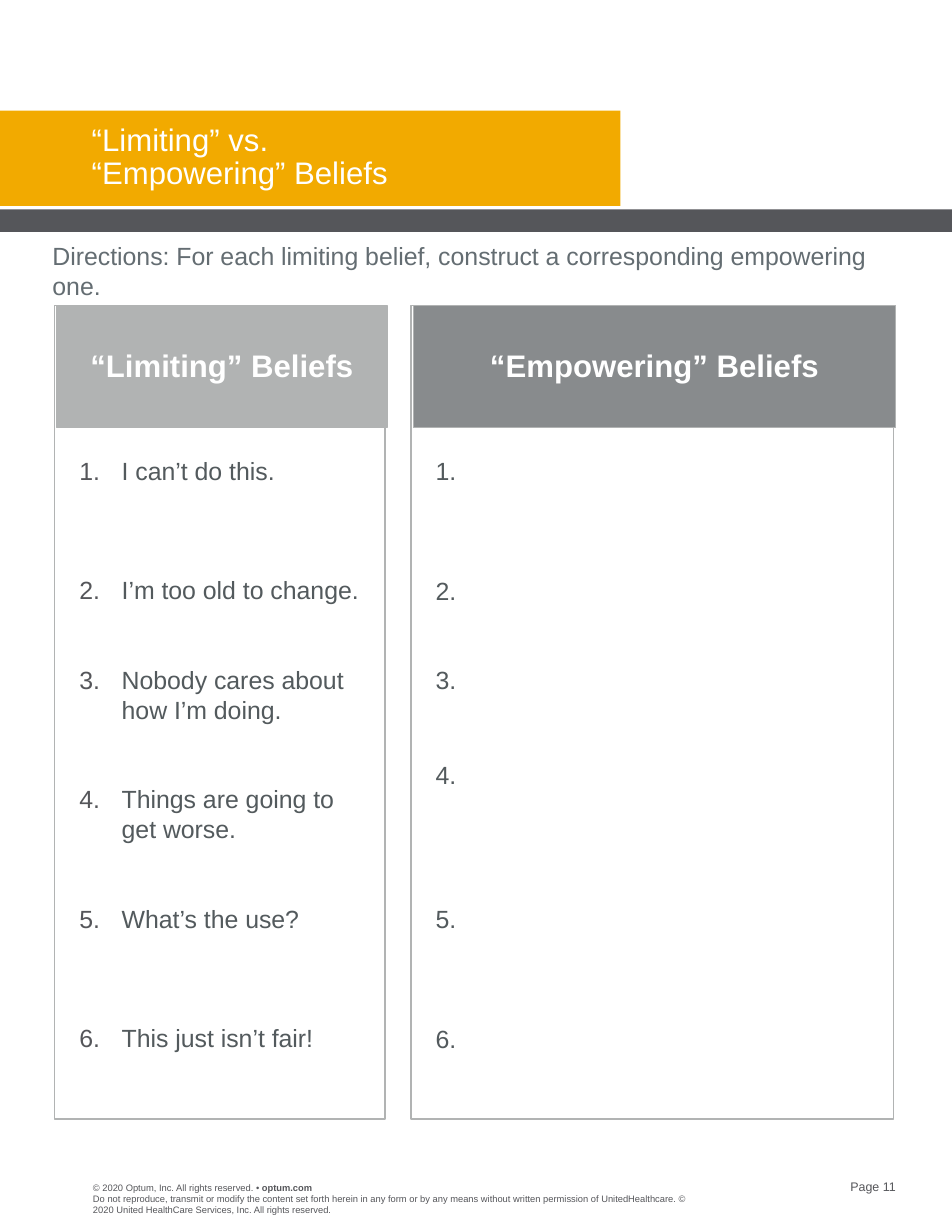
from pptx import Presentation
from pptx.dml.color import RGBColor
from pptx.enum.shapes import MSO_SHAPE
from pptx.enum.text import MSO_ANCHOR, MSO_AUTO_SIZE, PP_ALIGN
from pptx.oxml.ns import qn
from pptx.util import Cm, Pt
from lxml.etree import SubElement

WHITE = RGBColor(0xFF, 0xFF, 0xFF)
AMBER = RGBColor(0xF2, 0xAA, 0x00)
CHARCOAL = RGBColor(0x55, 0x56, 0x5A)
SLATE = RGBColor(0x64, 0x6D, 0x72)
BODY = RGBColor(0x53, 0x5A, 0x5D)
LIGHT_GRAY = RGBColor(0xB1, 0xB3, 0xB3)
MID_GRAY = RGBColor(0x88, 0x8B, 0x8D)

TITLE = "“Limiting” vs. \v“Empowering” Beliefs"
DIRECTIONS = "Directions: For each limiting belief, construct a corresponding empowering one."
COPYRIGHT = ["© 2020 Optum, Inc. All rights reserved. • ", "optum.com"]
PERMISSION = (
    "Do not reproduce, transmit or modify the content set forth herein in any form "
    "or by any means without written permission of UnitedHealthcare. "
    "© 2020 United HealthCare Services, Inc. All rights reserved."
)
PAGE = "Page 11"
LINE = 19.2
LIMITING = [
    ("I can’t do this.", 0),
    ("I’m too old to change.", 3 * LINE),
    ("Nobody cares about how I’m doing.", 2 * LINE),
    ("Things are going to get worse.", 2 * LINE),
    ("What’s the use?", 2 * LINE),
    ("This just isn’t fair!", 3 * LINE),
]
EMPOWERING = [
    ("1.", 0), ("2.", 57.8), ("3.", 38.3), ("4.", 41.9), ("5.", 73.4), ("6.", 57.8),
]
PANELS = [
    ("“Limiting” Beliefs", LIGHT_GRAY, 1.24, 7.49, LIMITING, True),
    ("“Empowering” Beliefs", MID_GRAY, 9.32, 10.95, EMPOWERING, False),
]
PANEL_TOP, PANEL_HEIGHT = 6.93, 18.45
HEADER_HEIGHT, HEADER_SHIFT = 2.77, 0.05


def set_font(font, size, color, bold=None):
    font.name, font.size, font.bold = "Arial", Pt(size), bold
    font.color.rgb = color


def prepare_frame(shape, insets=(0, 0, 0, 0), anchor=MSO_ANCHOR.TOP):
    frame = shape.text_frame
    frame.word_wrap = True
    frame.auto_size = MSO_AUTO_SIZE.NONE
    frame.vertical_anchor = anchor
    frame.margin_left, frame.margin_top, frame.margin_right, frame.margin_bottom = map(Cm, insets)
    return frame


def add_text(slide, box, runs, size, color, align=PP_ALIGN.LEFT):
    frame = prepare_frame(slide.shapes.add_textbox(*map(Cm, box)))
    paragraph = frame.paragraphs[0]
    paragraph.alignment = align
    for index, text in enumerate(runs):
        run = paragraph.add_run()
        run.text = text
        set_font(run.font, size, color, index > 0)


def add_rectangle(slide, box, fill=None, line=None, width=1):
    shape = slide.shapes.add_shape(MSO_SHAPE.RECTANGLE, *map(Cm, box))
    shape.shadow.inherit = False
    if fill is None:
        shape.fill.background()
    else:
        shape.fill.solid()
        shape.fill.fore_color.rgb = fill
    if line is None:
        shape.line.fill.background()
    else:
        shape.line.color.rgb = line
        shape.line.width = Pt(width)
    return shape


def number_paragraph(paragraph):
    properties = paragraph._p.get_or_add_pPr()
    properties.set("marL", str(Cm(0.96)))
    properties.set("indent", str(-Cm(0.96)))
    color = SubElement(properties, qn("a:buClr"))
    SubElement(color, qn("a:srgbClr"), val=str(CHARCOAL))
    SubElement(properties, qn("a:buFont"), typeface="Arial")
    SubElement(properties, qn("a:buAutoNum"), type="arabicPeriod")


def add_panel(slide, heading, fill, left, width, items, numbered):
    panel = add_rectangle(slide, (left, PANEL_TOP, width, PANEL_HEIGHT), line=LIGHT_GRAY)
    frame = prepare_frame(panel, (0.56, 3.4, 0.56, 0))
    frame.text = "\n".join(text for text, _ in items)
    for paragraph, (_, gap) in zip(frame.paragraphs, items):
        paragraph.alignment = PP_ALIGN.LEFT
        if gap:
            paragraph.space_before = Pt(gap)
        if numbered:
            number_paragraph(paragraph)
        set_font(paragraph.runs[0].font, 16, BODY)

    header = add_rectangle(
        slide, (left + HEADER_SHIFT, PANEL_TOP, width, HEADER_HEIGHT), fill, LIGHT_GRAY, 0.75
    )
    frame = prepare_frame(header, (0, 0, 0, 0.08), MSO_ANCHOR.MIDDLE)
    frame.text = heading
    frame.paragraphs[0].alignment = PP_ALIGN.CENTER
    set_font(frame.paragraphs[0].runs[0].font, 20, WHITE, True)


def add_title(slide):
    title = slide.shapes.title
    title.left, title.top, title.width, title.height = map(Cm, (2.08, 2.82, 11.43, 1.55))
    frame = prepare_frame(title)
    frame.text = TITLE
    paragraph = frame.paragraphs[0]
    paragraph.alignment = PP_ALIGN.LEFT
    paragraph.line_spacing = 0.9
    for run in paragraph.runs:
        set_font(run.font, 20, WHITE)
    slide.shapes._spTree.append(title._element)


def main():
    presentation = Presentation()
    presentation.slide_width, presentation.slide_height = Cm(21.59), Cm(27.94)
    slide = presentation.slides.add_slide(presentation.slide_layouts[5])
    add_rectangle(slide, (0, 2.51, 14.07, 2.16), AMBER)
    add_rectangle(slide, (0, 4.75, 21.59, 0.51), CHARCOAL)
    add_title(slide)
    for panel in PANELS:
        add_panel(slide, *panel)
    add_text(slide, (1.19, 5.46, 19.1, 1.37), [DIRECTIONS], 16, SLATE)
    add_text(slide, (2.11, 26.8, 5.5, 0.25), COPYRIGHT, 6, CHARCOAL)
    add_text(slide, (2.11, 27.05, 13.46, 0.51), [PERMISSION], 6, CHARCOAL)
    add_text(slide, (18.26, 26.75, 2.06, 0.33), [PAGE], 8, CHARCOAL, PP_ALIGN.RIGHT)
    presentation.save("out.pptx")


if __name__ == "__main__":
    main()
